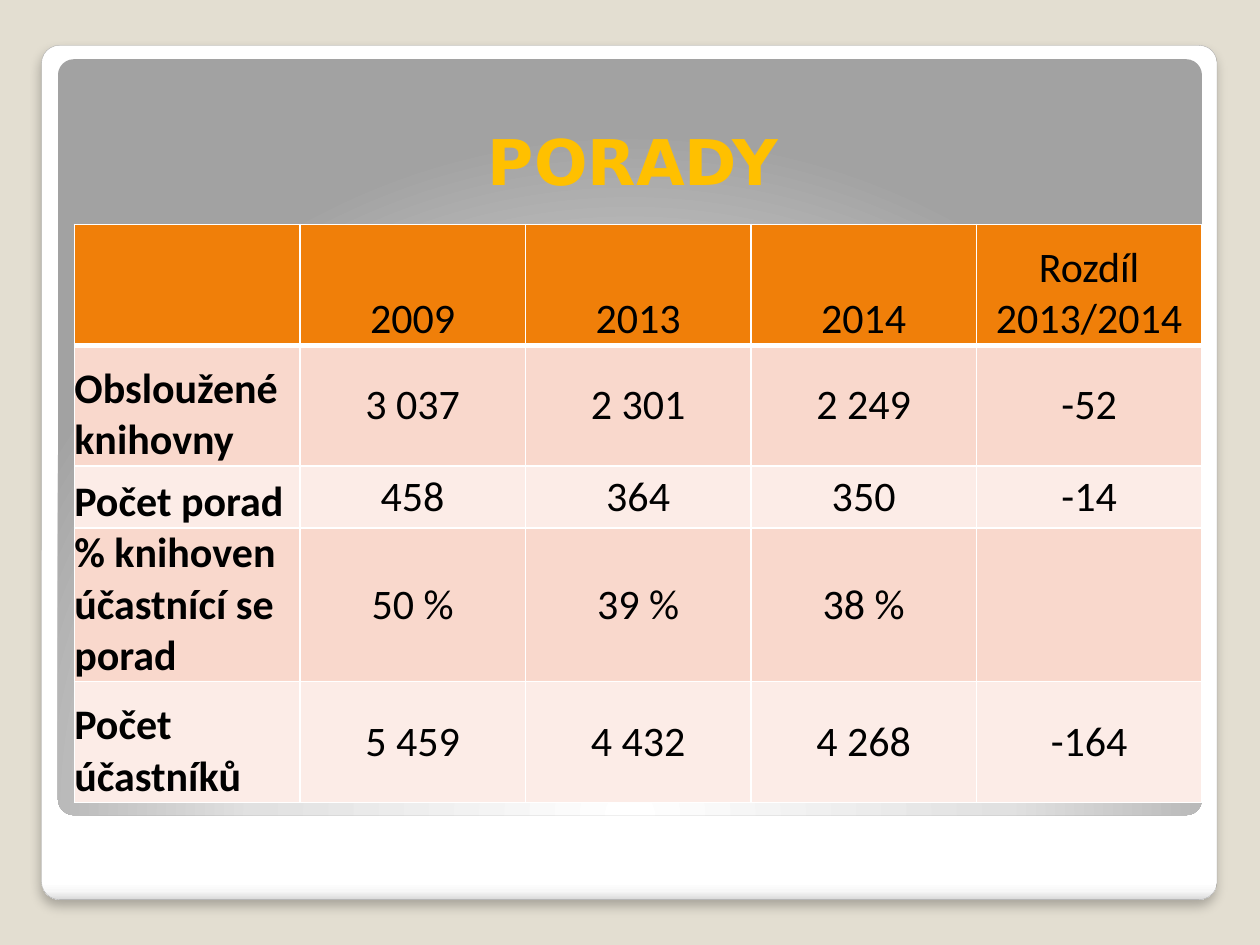
from dataclasses import dataclass

from lxml.etree import SubElement
from pptx import Presentation
from pptx.dml.color import RGBColor
from pptx.enum.shapes import MSO_SHAPE
from pptx.enum.text import MSO_ANCHOR, PP_ALIGN
from pptx.oxml import parse_xml
from pptx.oxml.ns import qn
from pptx.util import Inches, Pt

NAMESPACE = 'xmlns:a="http://schemas.openxmlformats.org/drawingml/2006/main"'


@dataclass(frozen=True)
class Theme:
    """Colours, fonts and type sizes of the slide."""
    backdrop: str = "E3DED1"
    frame_line: str = "A4A4A4"
    title: str = "FFC000"
    header: str = "F07F09"
    bands: tuple = ("F9D8CC", "FCECE7")
    text: str = "000000"
    border: str = "FFFFFF"
    title_font: str = "DejaVu Sans"
    body_font: str = "Calibri"
    title_size: int = 36
    body_size: int = 24


THEME = Theme()
FRAME_STOPS = [(0, "FFFFFF"), (98, "FFFFFF"), (99, "F7F7F7"), (100, "DADADA")]
PANEL_STOPS = [(0, "FFFFFF"), (55, "E1E1E1"), (100, "A2A2A2")]
LINEAR = '<a:lin ang="5400000" scaled="0"/>'
RADIAL = ('<a:path path="circle"><a:fillToRect l="50000" t="175000" '
          'r="50000" b="-75000"/></a:path>')
ROW_HEIGHTS = (0.96, 0.96, 0.49, 1.22, 0.96)
ROWS = (
    ("", "2009", "2013", "2014", "Rozdíl 2013/2014"),
    ("Obsloužené knihovny", "3 037", "2 301", "2 249", "-52"),
    ("Počet porad", "458", "364", "350", "-14"),
    ("% knihoven účastnící se porad", "50 %", "39 %", "38 %", ""),
    ("Počet účastníků", "5 459", "4 432", "4 268", "-164"),
)


def rgb(value):
    """Turn a hex string into a colour."""
    return RGBColor.from_string(value)


def style_text(frame, font, size, color, bold, align):
    """Format every paragraph and run of a text frame."""
    for para in frame.paragraphs:
        para.alignment = align
        for span in para.runs:
            span.font.name = font
            span.font.size = Pt(size)
            span.font.bold = bold
            span.font.color.rgb = rgb(color)


def add_panel(page, left, top, width, height, stops, direction):
    """Add a rounded panel with a gradient fill and no line."""
    panel = page.shapes.add_shape(
        MSO_SHAPE.ROUNDED_RECTANGLE,
        Inches(left), Inches(top), Inches(width), Inches(height))
    panel.adjustments[0] = 0.021
    panel.shadow.inherit = False
    panel.line.fill.background()
    marks = "".join(
        f'<a:gs pos="{share * 1000}"><a:srgbClr val="{color}"/></a:gs>'
        for share, color in stops)
    gradient = parse_xml(
        f'<a:gradFill {NAMESPACE} rotWithShape="1">'
        f'<a:gsLst>{marks}</a:gsLst>{direction}</a:gradFill>')
    panel.element.find(".//" + qn("a:prstGeom")).addnext(gradient)
    return panel


def add_frame(page):
    """Add the white outer panel with its thin line and soft shadow."""
    frame = add_panel(page, 0.33, 0.36, 9.33, 6.78, FRAME_STOPS, LINEAR)
    frame.line.color.rgb = rgb(THEME.frame_line)
    frame.line.width = Pt(0.16)
    effects = frame.element.find(".//" + qn("a:effectLst"))
    effects.append(parse_xml(
        f'<a:outerShdw {NAMESPACE} blurRad="{Pt(6)}" dist="{Pt(4)}" '
        'dir="5400000" algn="t" rotWithShape="0"><a:srgbClr val="000000">'
        '<a:alpha val="25000"/></a:srgbClr></a:outerShdw>'))


def place_title(page, text):
    """Move the title in front of the panels and format it."""
    title = page.shapes.title
    title.element.getparent().append(title.element)
    title.left, title.top = Inches(0.55), Inches(0.52)
    title.width, title.height = Inches(8.95), Inches(1.1)
    title.text_frame.text = text
    title.text_frame.vertical_anchor = MSO_ANCHOR.BOTTOM
    style_text(title.text_frame, THEME.title_font, THEME.title_size,
               THEME.title, True, PP_ALIGN.CENTER)


def set_borders(cell, top, bottom):
    """Draw the four borders of a cell, with top and bottom in points."""
    properties = cell._tc.get_or_add_tcPr()
    widths = {"lnL": 1, "lnR": 1, "lnT": top, "lnB": bottom}
    for index, (side, width) in enumerate(widths.items()):
        line = SubElement(properties, qn("a:" + side), w=str(Pt(width)))
        fill = SubElement(line, qn("a:solidFill"))
        SubElement(fill, qn("a:srgbClr"), val=THEME.border)
        properties.insert(index, line)


def fill_cell(cell, text, row, column):
    """Write and format one cell according to its place."""
    label = column == 0
    cell.text_frame.text = text
    cell.margin_left = cell.margin_right = 0
    cell.margin_top = cell.margin_bottom = 0
    bottom = row == 0 or label
    cell.vertical_anchor = MSO_ANCHOR.BOTTOM if bottom else MSO_ANCHOR.MIDDLE
    style_text(cell.text_frame, THEME.body_font, THEME.body_size, THEME.text,
               label, PP_ALIGN.LEFT if label else PP_ALIGN.CENTER)
    cell.fill.solid()
    color = THEME.bands[(row - 1) % 2] if row else THEME.header
    cell.fill.fore_color.rgb = rgb(color)
    set_borders(cell, 3 if row == 1 else 1, 3 if row == 0 else 1)


def add_meetings_table(page):
    """Add the table of meetings with equal columns."""
    table = page.shapes.add_table(
        len(ROWS), len(ROWS[0]), Inches(0.59), Inches(1.78),
        Inches(8.95), Inches(sum(ROW_HEIGHTS))).table
    for row, (height, values) in enumerate(zip(ROW_HEIGHTS, ROWS)):
        table.rows[row].height = Inches(height)
        for column, text in enumerate(values):
            fill_cell(table.cell(row, column), text, row, column)


def main():
    """Build the slide and save it."""
    deck = Presentation()
    deck.slide_width, deck.slide_height = Inches(10), Inches(7.5)
    page = deck.slides.add_slide(deck.slide_layouts[5])
    page.background.fill.solid()
    page.background.fill.fore_color.rgb = rgb(THEME.backdrop)
    add_frame(page)
    add_panel(page, 0.46, 0.47, 9.08, 6, PANEL_STOPS, RADIAL)
    place_title(page, "PORADY")
    add_meetings_table(page)
    deck.save("out.pptx")


if __name__ == "__main__":
    main()
